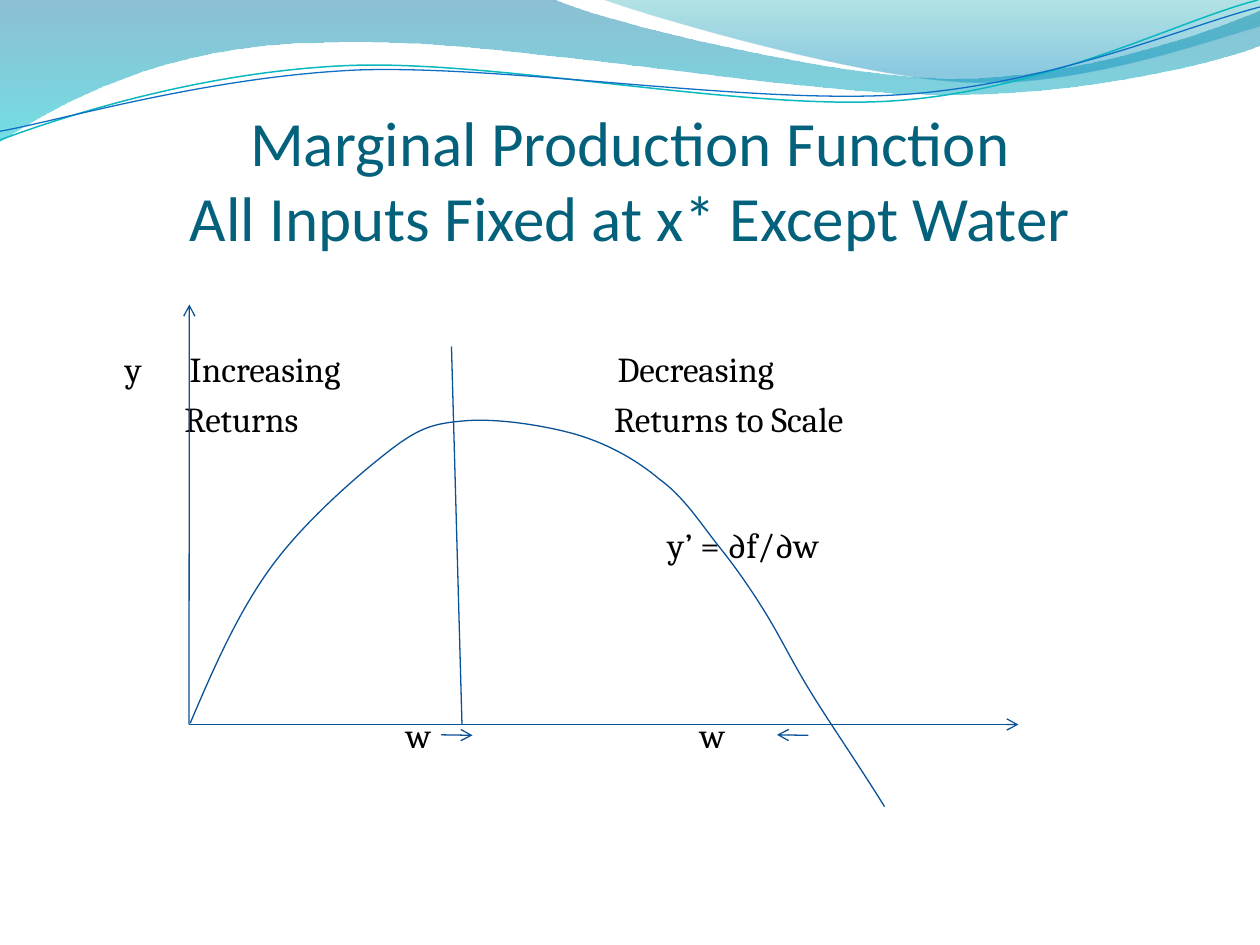
"""Build the slide on the marginal production function with its curve diagram."""
from lxml import etree
from pptx import Presentation
from pptx.dml.color import RGBColor
from pptx.enum.shapes import MSO_CONNECTOR
from pptx.enum.text import MSO_ANCHOR, MSO_AUTO_SIZE, PP_ALIGN
from pptx.oxml.ns import qn
from pptx.util import Pt

STRAIGHT = MSO_CONNECTOR.STRAIGHT
BOTTOM = MSO_ANCHOR.BOTTOM
NO_FIT = MSO_AUTO_SIZE.NONE
CENTER, LEFT = PP_ALIGN.CENTER, PP_ALIGN.LEFT

TITLE_TEAL = RGBColor(0x04, 0x61, 0x7B)
BLACK = RGBColor(0x00, 0x00, 0x00)
DIAGRAM_BLUE = RGBColor(0x09, 0x52, 0x95)
LINE_TEAL = RGBColor(0x0A, 0xB8, 0xBF)
LINE_BLUE = RGBColor(0x0F, 0x6F, 0xC6)
DEEP_BLUE = RGBColor(0x00, 0x74, 0xA1)
AQUA = RGBColor(0x00, 0xC6, 0xCF)
SEA_GREEN = RGBColor(0x00, 0xA1, 0xA9)
SKY_BLUE = RGBColor(0x00, 0x8B, 0xBF)


def add_outline(page, start, segments, close=False):
    """Draw straight (one point) and cubic (three points) segments in points."""
    builder = page.shapes.build_freeform(Pt(start[0]), Pt(start[1]))
    corners = [(Pt(x), Pt(y)) for segment in segments for x, y in segment]
    builder.add_line_segments(corners, close=close)
    shape = builder.convert_to_shape()
    shape.shadow.inherit = False
    steps = iter(list(shape._element.iter(qn("a:lnTo"))))
    for segment in segments:
        group = [next(steps) for _ in segment]
        if len(group) == 3:
            cubic = etree.Element(qn("a:cubicBezTo"))
            group[0].addprevious(cubic)
            for step in group:
                cubic.append(step[0])
                step.getparent().remove(step)
    return shape


def style_label(para, text, gap=0):
    """Write one diagram label in the label font."""
    para.text = text
    para.alignment = LEFT
    para.line_spacing = Pt(24)
    para.space_before = Pt(gap)
    para.font.name, para.font.size = "Cambria", Pt(20)
    para.font.color.rgb = BLACK


deck = Presentation()
deck.slide_width, deck.slide_height = Pt(720), Pt(540)
page = deck.slides.add_slide(deck.slide_layouts[1])
title, body = page.placeholders

WAVES = [
    ((0, 0), [[(317, 0)],
              [(343, 12), (478, 45), (546, 45)],
              [(614, 45), (690, 19), (720, 6)],
              [(720, 26)],
              [(708, 32), (626, 55), (537, 54)],
              [(447, 54), (275, 20), (185, 24.5)],
              [(93, 25), (33, 60), (0, 81)]],
     [(0, DEEP_BLUE, 45), (1, AQUA, 55)]),
    ((345, 0), [[(366, 8), (491, 45), (554, 47)],
                [(616, 50), (692, 23), (720, 15)],
                [(720, 0)]],
     [(0, SEA_GREEN, 30), (0.8, SKY_BLUE, 45)]),
]
for start, segments, stops in WAVES:
    wave = add_outline(page, start, segments, close=True)
    wave.line.fill.background()
    wave.fill.gradient()
    wave.fill.gradient_angle = 270
    for stop, (position, color, opacity) in zip(wave.fill.gradient_stops, stops):
        stop.position = position
        stop.color.rgb = color
    for color_tag, (_, _, opacity) in zip(wave._element.spPr.iter(qn("a:srgbClr")), stops):
        etree.SubElement(color_tag, qn("a:alpha"), val=str(opacity * 1000))

CURVES = [
    ((0, 80), [[(35, 67), (114, 41), (199, 37.5)],
               [(284, 34), (427, 64), (513, 57.5)],
               [(600, 51), (675, 11), (719, 0)]], LINE_TEAL, 0.85),
    ((0, 75), [[(34, 69), (118, 44), (204, 40)],
               [(290, 37), (430, 60), (516, 54)],
               [(602, 48), (677, 15), (720, 4)]], LINE_BLUE, 0.75),
    ((108.7, 413.3), [[(122, 382), (136, 350), (155, 324)],
                      [(174, 298), (204, 272), (222, 258)],
                      [(240, 244), (248, 242), (266, 240.5)],
                      [(284, 239), (311, 243), (330, 248.5)],
                      [(348, 254), (364, 263), (377, 274)],
                      [(391, 284), (401, 300), (411, 312.5)],
                      [(421, 325), (430, 338), (438.5, 352)],
                      [(447, 366), (452, 377), (463, 395)],
                      [(474, 413), (490, 436), (505.5, 461)]], DIAGRAM_BLUE, 0.75),
]
for start, segments, color, width in CURVES:
    curve = add_outline(page, start, segments)
    curve.fill.background()
    curve.line.color.rgb = color
    curve.line.width = Pt(width)

tree = title._element.getparent()
for shape in (title, body, curve):
    tree.append(shape._element)

title.left, title.top, title.width, title.height = Pt(36), Pt(55.4), Pt(648), Pt(90)
frame = title.text_frame
frame.auto_size = NO_FIT
frame.vertical_anchor = BOTTOM
frame.margin_left = frame.margin_right = frame.margin_bottom = Pt(0)
para = frame.paragraphs[0]
para.text = "Marginal Production Function\vAll Inputs Fixed at x* Except Water"
para.alignment = CENTER
para.font.name, para.font.size = "Calibri", Pt(36)
para.font.color.rgb = TITLE_TEAL

body.left, body.top, body.width, body.height = Pt(36), Pt(152.6), Pt(648), Pt(345.6)
frame = body.text_frame
frame.auto_size = NO_FIT
frame.margin_left, frame.margin_top = Pt(35.4), Pt(46)
LABELS = [
    ("Increasing\tDecreasing", 0, 37, 281.5),
    ("Returns\tReturns to Scale", 4.6, 34, 279.5),
    ("y’ = ∂f/∂w", 47.8, 310, 310),
    ("w\tw", 84.6, 160.5, 328.5),
]
for number, (text, gap, first, second) in enumerate(LABELS):
    para = frame.add_paragraph() if number else frame.paragraphs[0]
    properties = para._p.get_or_add_pPr()
    properties.set("marL", str(Pt(second)))
    properties.set("indent", str(Pt(first - second)))
    etree.SubElement(properties, qn("a:buNone"))
    style_label(para, text, gap)

axis_label = page.shapes.add_textbox(Pt(71.4), Pt(198.6), Pt(20), Pt(24))
frame = axis_label.text_frame
frame.word_wrap = True
frame.margin_left = frame.margin_right = frame.margin_top = frame.margin_bottom = Pt(0)
style_label(frame.paragraphs[0], "y")

LINES = [
    ((108, 414), (582, 414), True),
    ((108, 414), (108.2, 174), True),
    ((252, 419.9), (270, 420.2), True),
    ((462, 420.2), (444, 419.9), True),
    ((258, 198), (264, 414), False),
]
for (x1, y1), (x2, y2), arrow in LINES:
    line = page.shapes.add_connector(STRAIGHT, Pt(x1), Pt(y1), Pt(x2), Pt(y2))
    line.line.color.rgb = DIAGRAM_BLUE
    line.line.width = Pt(0.75)
    if arrow:
        etree.SubElement(line.line._get_or_add_ln(), qn("a:tailEnd"), type="arrow")
    etree.SubElement(line._element.spPr, qn("a:effectLst"))

deck.save("out.pptx")
